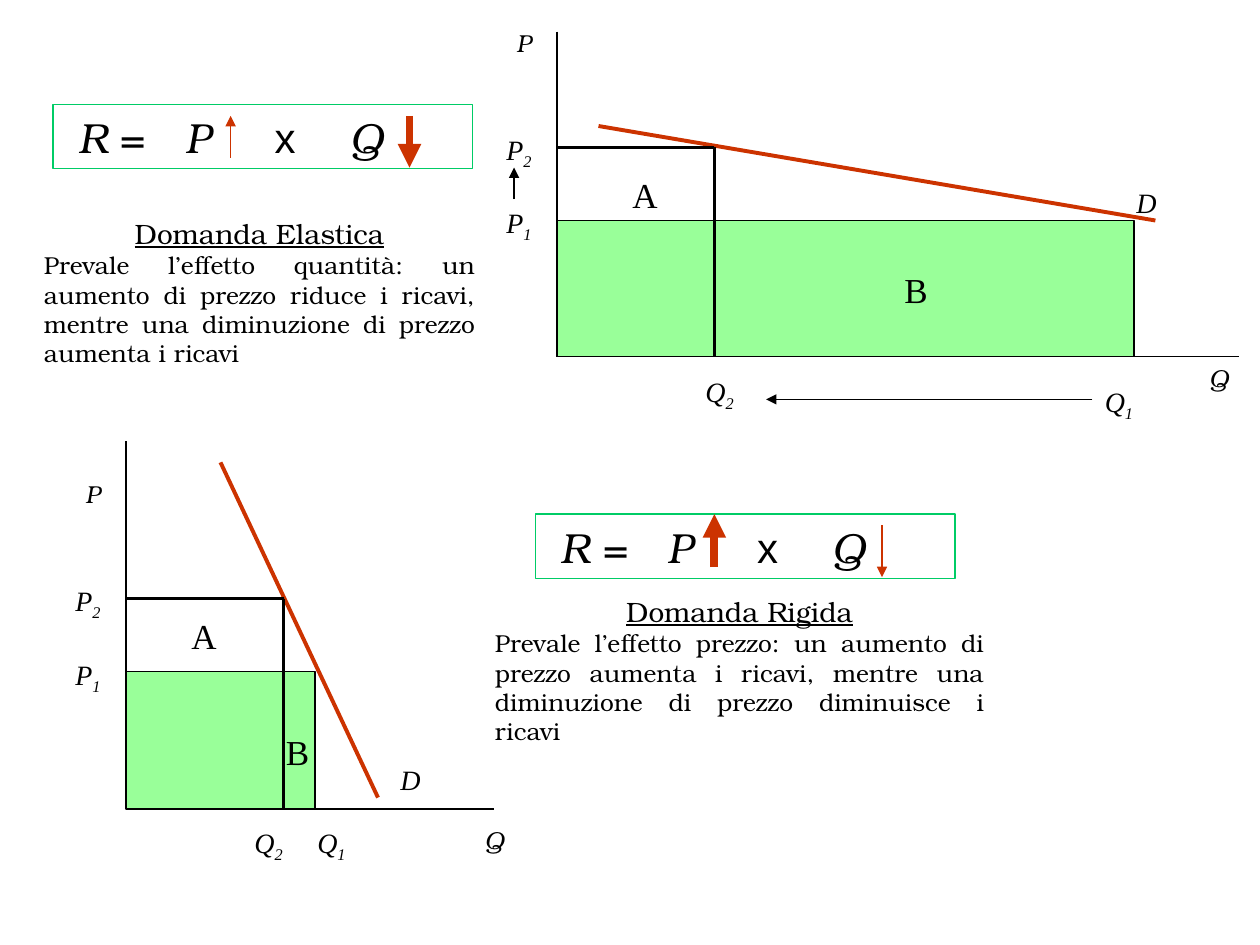
"""Build a slide on price, quantity and revenue under elastic and rigid demand."""
from lxml.etree import SubElement
from pptx import Presentation
from pptx.dml.color import RGBColor
from pptx.enum.shapes import MSO_CONNECTOR, MSO_SHAPE
from pptx.enum.text import MSO_ANCHOR, MSO_AUTO_SIZE, PP_ALIGN
from pptx.oxml.ns import qn
from pptx.util import Inches, Pt

THEME = {
    "ink": "000000", "demand": "CC3300", "area": "99FF99", "frame": "00CC66",
    "serif": "TeX Gyre Bonum", "label": "Times New Roman", "sans": "Arial",
    "formula": 24, "region": 20, "heading": 16, "mark": 16, "body": 14, "axis": 14,
    "thin": 0.75, "medium": 1.5, "demand_width": 2.25, "heavy": 4.5,
}

FORMULA = [("R", "serif", True), (" =\t", "serif", False), ("P\t", "serif", True),
           ("x\t", "sans", False), ("Q", "serif", True)]
FORMULA_TABS = [0.85, 1.56, 2.16]

PANELS = [
    {
        "origin": (4.42, 2.83), "top": 0.25, "x_axis": (5, 9.83),
        "q1": 9, "q2": 5.67, "p1": 1.75, "p2": 1.17,
        "demand": (4.75, 1, 9.17, 1.75),
        "axis_names": [("P", 4, 0.17, 0.42), ("Q", 9.5, 2.83, 0.35)],
        "marks": [("P_1", 3.92, 1.58, 0.41), ("P_2", 3.92, 1, 0.42), ("D", 8.92, 1.42, 0.36),
                  ("Q_1", 8.67, 3, 0.44), ("Q_2", 5.5, 2.92, 0.58)],
        "regions": [("A", 4.92, 1.33, 0.4), ("B", 7.08, 2.08, 0.39)],
        "arrows": [(1.83, 1.25, 1.83, 0.92, "demand", "thin"),
                   (3.25, 0.92, 3.25, 1.33, "demand", "heavy"),
                   (4.08, 1.58, 4.08, 1.33, "ink", "thin"),
                   (8.67, 3.17, 6.08, 3.17, "ink", "thin")],
        "formula": (0.42, 0.83), "note": (0.25, 1.67, 3.62),
        "heading": "Domanda Elastica",
        "body": "Prevale l’effetto quantità: un aumento di prezzo riduce i ricavi, "
                "mentre una diminuzione di prezzo aumenta i ricavi",
    },
    {
        "origin": (1, 6.42), "top": 3.5, "x_axis": (1, 3.92),
        "q1": 2.5, "q2": 2.25, "p1": 5.33, "p2": 4.75,
        "demand": (1.75, 3.67, 3, 6.33),
        "axis_names": [("P", 0.58, 3.75, 0.42), ("Q", 3.75, 6.5, 0.35)],
        "marks": [("P_1", 0.5, 5.17, 0.41), ("P_2", 0.5, 4.58, 0.42), ("D", 3.08, 6, 0.36),
                  ("Q_1", 2.42, 6.5, 0.44), ("Q_2", 1.92, 6.5, 0.58)],
        "regions": [("A", 1.42, 4.83, 0.4), ("B", 2.17, 5.75, 0.39)],
        "arrows": [(7, 4.17, 7, 4.58, "demand", "thin"),
                   (5.67, 4.5, 5.67, 4.08, "demand", "heavy")],
        "formula": (4.25, 4.08), "note": (3.83, 4.67, 4.08),
        "heading": "Domanda Rigida",
        "body": "Prevale l’effetto prezzo: un aumento di prezzo aumenta i ricavi, "
                "mentre una diminuzione di prezzo diminuisce i ricavi",
    },
]


def color(name):
    """Return a theme colour."""
    return RGBColor.from_string(THEME[name])


def add_run(p, text, *, size, font="serif", italic=False, underline=False, sub=False):
    """Append formatted text to a paragraph."""
    r = p.add_run()
    r.text = text
    f = r.font
    f.name, f.size, f.italic, f.underline = THEME[font], Pt(THEME[size]), italic, underline
    f.color.rgb = color("ink")
    if sub:
        r._r.get_or_add_rPr().set("baseline", "-25000")


def add_box(s, x, y, w, h, wrap=True):
    """Add a text box and return its text frame."""
    tf = s.shapes.add_textbox(Inches(x), Inches(y), Inches(w), Inches(h)).text_frame
    tf.word_wrap = wrap
    tf.auto_size = MSO_AUTO_SIZE.SHAPE_TO_FIT_TEXT
    return tf


def add_label(s, text, x, y, w, h, **style):
    """Add a label whose part after an underscore is a subscript."""
    p = add_box(s, x, y, w, h, wrap=False).paragraphs[0]
    base, _, index = text.partition("_")
    add_run(p, base, **style)
    if index:
        add_run(p, index, sub=True, **style)


def add_line(s, x1, y1, x2, y2, ink="ink", width="thin", arrow=False):
    """Add a straight line, with an arrowhead at its end if asked."""
    c = s.shapes.add_connector(MSO_CONNECTOR.STRAIGHT, *map(Inches, (x1, y1, x2, y2)))
    c.line.color.rgb = color(ink)
    c.line.width = Pt(THEME[width])
    if arrow:
        SubElement(c.line._get_or_add_ln(), qn("a:tailEnd"), type="triangle")
    SubElement(c._element.spPr, qn("a:effectLst"))


def add_rect(s, x, y, w, h, line, fill=None):
    """Add a rectangle with a thin outline."""
    sp = s.shapes.add_shape(MSO_SHAPE.RECTANGLE, *map(Inches, (x, y, w, h)))
    sp.shadow.inherit = False
    if fill:
        sp.fill.solid()
        sp.fill.fore_color.rgb = color(fill)
    else:
        sp.fill.background()
    sp.line.color.rgb = color(line)
    sp.line.width = Pt(THEME["thin"])
    return sp


def add_formula(s, x, y):
    """Add the framed revenue formula, spaced by tab stops."""
    tf = add_rect(s, x, y, 3.33, 0.51, "frame").text_frame
    tf.margin_left = Inches(0.2)
    tf.vertical_anchor = MSO_ANCHOR.MIDDLE
    p = tf.paragraphs[0]
    p.alignment = PP_ALIGN.LEFT
    tabs = SubElement(p._p.get_or_add_pPr(), qn("a:tabLst"))
    for pos in FORMULA_TABS:
        SubElement(tabs, qn("a:tab"), pos=str(Inches(pos)), algn="l")
    for text, font, italic in FORMULA:
        add_run(p, text, size="formula", font=font, italic=italic)


def add_note(s, x, y, w, heading, body):
    """Add a centred heading over a justified explanation."""
    tf = add_box(s, x, y, w, 1.3)
    p = tf.paragraphs[0]
    p.alignment = PP_ALIGN.CENTER
    add_run(p, heading, size="heading", underline=True)
    p = tf.add_paragraph()
    p.alignment = PP_ALIGN.JUSTIFY
    add_run(p, body, size="body")


def add_panel(s, d):
    """Draw one demand graph with its formula and note."""
    x0, y0 = d["origin"]
    q2, p1, p2 = d["q2"], d["p1"], d["p2"]
    left, right = d["x_axis"]
    add_line(s, left, y0, right, y0)
    add_line(s, *d["demand"], ink="demand", width="demand_width")
    add_rect(s, x0, p1, d["q1"] - x0, y0 - p1, "ink", "area")
    add_line(s, x0, d["top"], x0, y0)
    add_line(s, x0, p2, q2, p2, width="medium")
    add_line(s, q2, p2, q2, y0, width="medium")
    for label in d["axis_names"]:
        add_label(s, *label, 0.33, size="axis", italic=True)
    for label in d["marks"]:
        add_label(s, *label, 0.37, size="mark", font="label", italic=True)
    for label in d["regions"]:
        add_label(s, *label, 0.43, size="region", font="label")
    add_formula(s, *d["formula"])
    for arrow in d["arrows"]:
        add_line(s, *arrow, arrow=True)
    add_note(s, *d["note"], d["heading"], d["body"])


def main():
    """Create and save the slide."""
    prs = Presentation()
    prs.slide_width, prs.slide_height = Inches(10), Inches(7.5)
    s = prs.slides.add_slide(prs.slide_layouts[6])
    for panel in PANELS:
        add_panel(s, panel)
    prs.save("out.pptx")


if __name__ == "__main__":
    main()
